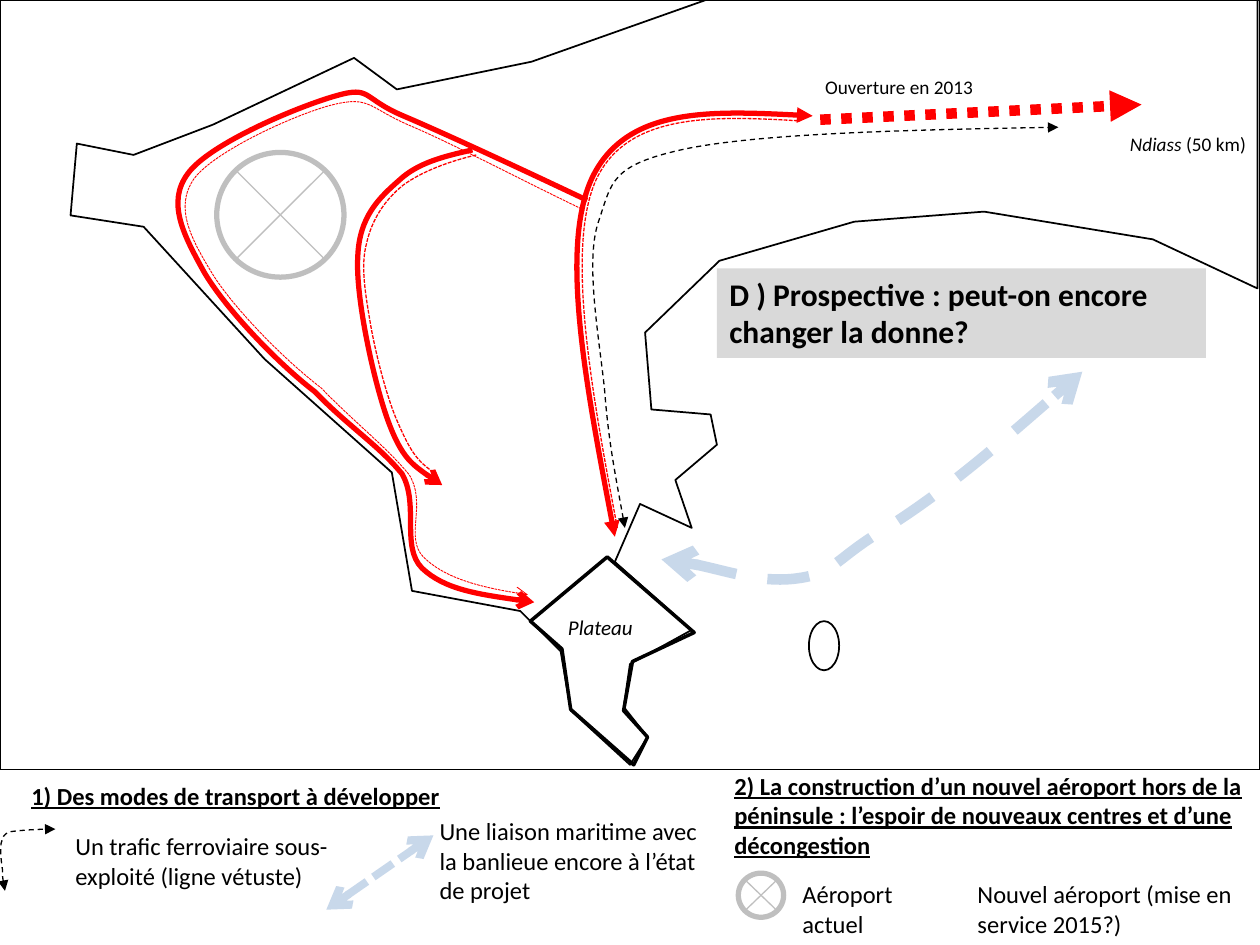
from math import sqrt

from lxml.etree import SubElement
from pptx import Presentation
from pptx.dml.color import RGBColor
from pptx.enum.dml import MSO_LINE
from pptx.enum.shapes import MSO_CONNECTOR, MSO_SHAPE
from pptx.enum.text import MSO_ANCHOR, MSO_AUTO_SIZE, PP_ALIGN
from pptx.oxml.ns import qn
from pptx.util import Pt

PX = 9144  # 100 px to the inch
COLORS = {
    "ink": "000000",
    "road": "FF0000",
    "sea_link": "4A7EBB",
    "airport": "BFBFBF",
    "title_fill": "D9D9D9",
}

COAST = [
    (61, 114), (56, 171), (114, 180), (210, 285), (311, 375), (327, 469), (413, 485),
    (445, 517), (453, 564), (500, 607), (514, 585), (495, 561), (500, 527), (549, 500),
    (488, 446), (508, 400), (549, 419), (536, 381), (569, 353), (564, 329), (517, 325),
    (512, 264), (571, 207), (678, 176), (781, 168), (915, 190), (998, 229), (998, -3),
    (566, -2), (422, 49), (315, 71), (281, 46), (169, 99), (106, 123),
]
PLATEAU = [
    (421, 493), (482, 442), (551, 502), (502, 525), (495, 564), (514, 585), (503, 607),
    (453, 563), (446, 515),
]

# Curves: a start point, then two control points and an end point for each segment.
EAST_ROAD = [(488, 426), (466, 311), (444, 196), (470, 141), (497, 85), (571, 88), (645, 92)]
WEST_ROAD = [
    (466, 159), (409, 132), (353, 106), (320, 92), (287, 78), (295, 68), (267, 76),
    (238, 84), (166, 114), (149, 138), (132, 161), (146, 187), (162, 216),
    (179, 245), (220, 288), (250, 311), (276, 338), (300, 353), (319, 376),
    (333, 400), (318, 434), (335, 451), (353, 468), (388, 473), (424, 478),
]
CENTRAL_ROAD = [
    (375, 119), (353, 124), (332, 129), (317, 143), (301, 157), (285, 172), (284, 204),
    (282, 236), (297, 304), (308, 334), (319, 364), (335, 375), (351, 385),
]
RAILWAY = [
    (496, 419), (490, 385), (483, 351), (480, 311), (476, 270), (464, 208), (475, 176),
    (486, 144), (484, 131), (545, 118), (605, 106), (723, 103), (840, 101),
]
SEA_LINK = [
    (525, 444), (541, 443), (604, 463), (633, 459), (663, 455), (662, 444), (702, 420),
    (750, 390), (804, 343), (859, 295),
]
RAILWAY_KEY = [
    (4, 707), (3, 702), (2, 697), (2, 690), (1, 684), (0, 674), (1, 669),
    (3, 664), (2, 662), (9, 660), (17, 659), (30, 658), (44, 658),
]
WEST_LANE = [
    (464, 167), (408, 140), (359, 114), (326, 100), (293, 86), (294, 76), (265, 83),
    (236, 90), (170, 120), (154, 142), (138, 165), (152, 190), (169, 218),
    (186, 245), (225, 285), (255, 308), (281, 335), (306, 354), (325, 377),
    (339, 401), (321, 426), (336, 442), (352, 458), (383, 467), (419, 472),
]
CENTRAL_LANE = [
    (378, 123), (357, 128), (335, 136), (320, 147), (305, 159), (295, 175), (291, 193),
    (286, 211), (290, 233), (294, 257), (298, 280), (307, 316), (316, 336),
    (325, 356), (330, 366), (346, 376),
]
EAST_LANE = [(490, 419), (469, 308), (449, 197), (473, 143), (498, 89), (567, 92), (635, 96)]


def px(*lengths):
    return [length * PX for length in lengths]


def rgb(name):
    return RGBColor.from_string(COLORS[name])


def style_line(shape, color, width, dash=None, head=None, tail=None, alpha=None):
    """Set the stroke; head is the arrowhead at the start, tail at the end."""
    line = shape.line
    line.width = Pt(width)
    line.color.rgb = rgb(color)
    if dash is not None:
        line.dash_style = dash
    ln = line._get_or_add_ln()
    if alpha:
        SubElement(ln.find(".//" + qn("a:srgbClr")), qn("a:alpha"), val=str(alpha * 1000))
    for tag, arrowhead in (("a:headEnd", head), ("a:tailEnd", tail)):
        if arrowhead:
            SubElement(ln, qn(tag), type=arrowhead)


def add_path(shapes, points, color, width, closed=False, **stroke):
    builder = shapes.build_freeform(*points[0], scale=PX)
    builder.add_line_segments(points[1:], close=closed)
    outline = builder.convert_to_shape()
    outline.fill.background()
    outline.shadow.inherit = False
    style_line(outline, color, width, **stroke)
    return outline


def add_curve(shapes, points, color, width, **stroke):
    """Draw a path whose points after the first are cubic Bézier triples."""
    curve = add_path(shapes, points, color, width, **stroke)
    path = curve._element.find(".//" + qn("a:path"))
    steps = path.findall(qn("a:lnTo"))
    for first in range(0, len(steps), 3):
        segment = SubElement(path, qn("a:cubicBezTo"))
        for step in steps[first:first + 3]:
            segment.append(step[0])
            path.remove(step)


def add_line(shapes, start, end, color, width, **stroke):
    line = shapes.add_connector(MSO_CONNECTOR.STRAIGHT, *px(*start, *end))
    style_line(line, color, width, **stroke)
    SubElement(line._element.spPr, qn("a:effectLst"))


def add_outline(shapes, kind, box, color, width):
    outline = shapes.add_shape(kind, *px(*box))
    outline.fill.background()
    outline.shadow.inherit = False
    style_line(outline, color, width)


def add_airport(shapes, left, top, width, height):
    """Draw a ring crossed by the two diagonals that end on it."""
    group = shapes.add_group_shape().shapes
    add_outline(group, MSO_SHAPE.OVAL, (left, top, width, height), "airport", 3)
    inset = (1 - sqrt(0.5)) / 2
    dx, dy = round(width * inset), round(height * inset)
    x1, x2 = left + dx, left + width - dx
    y1, y2 = top + dy, top + height - dy
    add_line(group, (x1, y1), (x2, y2), "airport", 0.75)
    add_line(group, (x1, y2), (x2, y1), "airport", 0.75)


def add_text(shapes, box, text, size=14, bold=False, underline=False, italic="",
             wrap=True, fill=None):
    """Add a text box; the italic words come before the text."""
    if fill:
        holder = shapes.add_shape(MSO_SHAPE.RECTANGLE, *px(*box))
        holder.fill.solid()
        holder.fill.fore_color.rgb = rgb(fill)
        holder.line.fill.background()
        holder.shadow.inherit = False
    else:
        holder = shapes.add_textbox(*px(*box))
    frame = holder.text_frame
    frame.word_wrap = wrap
    frame.auto_size = MSO_AUTO_SIZE.SHAPE_TO_FIT_TEXT
    frame.vertical_anchor = MSO_ANCHOR.TOP
    paragraph = frame.paragraphs[0]
    paragraph.alignment = PP_ALIGN.LEFT
    for words, slanted in ((italic, True), (text, False)):
        if not words:
            continue
        run = paragraph.add_run()
        run.text = words
        font = run.font
        font.name, font.size, font.color.rgb = "Calibri", Pt(size), rgb("ink")
        font.bold, font.underline, font.italic = bold, underline, slanted


def draw_map(shapes):
    add_path(shapes, COAST, "ink", 1, closed=True)
    add_outline(shapes, MSO_SHAPE.RECTANGLE, (0, 0, 1000, 611), "ink", 0.75)
    add_outline(shapes, MSO_SHAPE.OVAL, (642, 493, 24, 39), "ink", 1)
    add_path(shapes, PLATEAU, "ink", 2, closed=True)
    add_text(shapes, (441, 483, 74, 30), "", size=12, italic="Plateau", wrap=False)
    add_curve(shapes, EAST_ROAD, "road", 3, head="triangle", tail="triangle")
    for road in (WEST_ROAD, CENTRAL_ROAD):
        add_curve(shapes, road, "road", 3, tail="arrow")
    add_curve(shapes, RAILWAY, "ink", 0.75, dash=MSO_LINE.DASH, head="triangle", tail="triangle")
    add_line(shapes, (651, 95), (906, 83), "road", 6, dash=MSO_LINE.ROUND_DOT, tail="triangle")
    add_text(shapes, (645, 55, 139, 29), "Ouverture en 2013", size=11, wrap=False)
    add_text(shapes, (887, 100, 113, 29), " (50 km)", size=11, italic="Ndiass", wrap=False)
    add_curve(shapes, SEA_LINK, "sea_link", 6, dash=MSO_LINE.DASH, head="arrow", tail="arrow",
              alpha=29)
    add_airport(shapes, 172, 121, 101, 99)
    add_text(shapes, (569, 213, 388, 71), "D ) Prospective : peut-on encore changer la donne?",
             size=18, bold=True, fill="title_fill")
    add_curve(shapes, WEST_LANE, "road", 0.5, dash=MSO_LINE.SQUARE_DOT, tail="arrow")
    for lane in (CENTRAL_LANE, EAST_LANE):
        add_curve(shapes, lane, "road", 0.75, dash=MSO_LINE.SQUARE_DOT)


def draw_legend(shapes):
    add_text(shapes, (15, 615, 346, 34), "1) Des modes de transport à développer",
             bold=True, underline=True, wrap=False)
    add_curve(shapes, RAILWAY_KEY, "ink", 0.75, dash=MSO_LINE.DASH, head="triangle",
              tail="triangle")
    add_text(shapes, (50, 655, 224, 57), "Un trafic ferroviaire sous- exploité (ligne vétuste)")
    add_line(shapes, (259, 722), (344, 663), "sea_link", 4.5, dash=MSO_LINE.SQUARE_DOT,
             head="arrow", tail="arrow", alpha=29)
    add_text(shapes, (339, 643, 227, 81),
             "Une liaison maritime avec la banlieue encore à l’état de projet")
    add_text(shapes, (573, 607, 427, 81),
             "2) La construction d’un nouvel aéroport hors de la péninsule : "
             "l’espoir de nouveaux centres et d’une décongestion", bold=True, underline=True)
    add_airport(shapes, 586, 693, 36, 35)
    add_text(shapes, (627, 693, 125, 57), "Aéroport actuel")
    add_text(shapes, (766, 693, 234, 57), "Nouvel aéroport (mise en service 2015?)")


def main():
    presentation = Presentation()
    presentation.slide_width, presentation.slide_height = px(1000, 750)
    slide = presentation.slides.add_slide(presentation.slide_layouts[6])
    draw_map(slide.shapes)
    draw_legend(slide.shapes)
    presentation.save("out.pptx")


if __name__ == "__main__":
    main()
